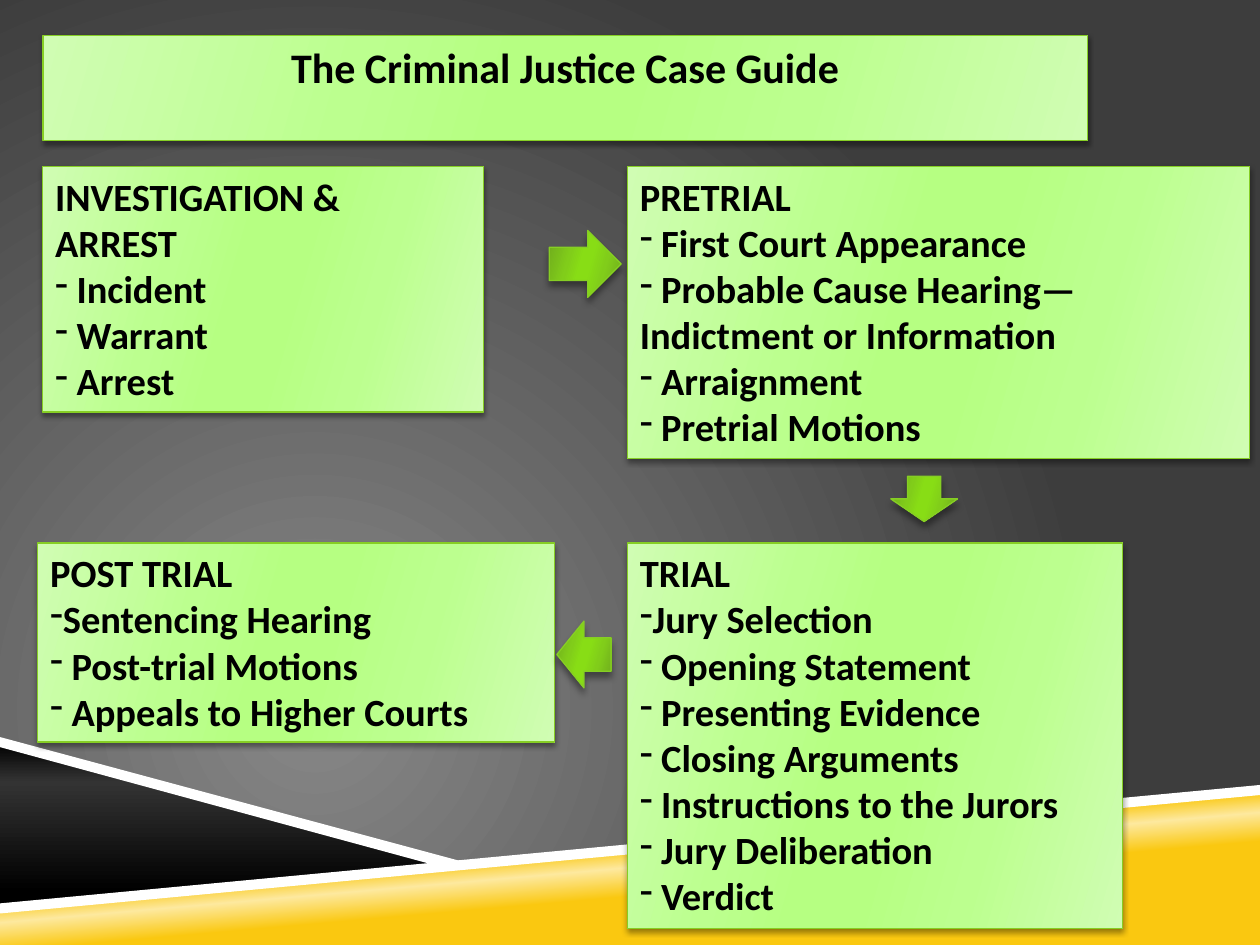
"""Build the Criminal Justice Case Guide flow chart slide."""
import pptx
import pptx.dml.color
import pptx.enum.shapes
import pptx.enum.text
import pptx.oxml.ns
import pptx.util
from lxml import etree

Inches = pptx.util.Inches
Pt = pptx.util.Pt
RGBColor = pptx.dml.color.RGBColor
qn = pptx.oxml.ns.qn
MSO_SHAPE = pptx.enum.shapes.MSO_SHAPE

BLACK = RGBColor(0x00, 0x00, 0x00)
CHARCOAL = RGBColor(0x33, 0x33, 0x33)
DARK_GRAY = RGBColor(0x3D, 0x3D, 0x3D)
GRAY = RGBColor(0x87, 0x87, 0x87)
WHITE = RGBColor(0xFF, 0xFF, 0xFF)
GOLD = RGBColor(0xFA, 0xC8, 0x10)
PALE_GOLD = RGBColor(0xFD, 0xE9, 0x9F)
PALE_GREEN = RGBColor(0xD0, 0xFD, 0xB3)
SOFT_GREEN = RGBColor(0xBC, 0xFF, 0x8F)
LIGHT_GREEN = RGBColor(0xB6, 0xFF, 0x82)
DEEP_GREEN = RGBColor(0x6E, 0xA9, 0x1D)
MID_GREEN = RGBColor(0x81, 0xCD, 0x1A)
BRIGHT_GREEN = RGBColor(0x88, 0xDD, 0x15)
BORDER_GREEN = RGBColor(0x86, 0xCE, 0x24)

GOLD_STOPS = [(39, GOLD), (50, PALE_GOLD), (58, GOLD)]
BLACK_STOPS = [(0, BLACK), (24, CHARCOAL), (90, BLACK)]
GREEN_POSITIONS = [0, 30, 45, 55, 73, 100]
BOX_STOPS = list(zip(GREEN_POSITIONS, [PALE_GREEN, SOFT_GREEN, LIGHT_GREEN,
                                       LIGHT_GREEN, SOFT_GREEN, PALE_GREEN]))
ARROW_STOPS = list(zip(GREEN_POSITIONS, [DEEP_GREEN, MID_GREEN, BRIGHT_GREEN,
                                         BRIGHT_GREEN, MID_GREEN, DEEP_GREEN]))


def apply_gradient(fill, properties, stops, angle=None):
    """Fill with a linear gradient, or a circular one if there is no angle."""
    fill.gradient()
    gradient = properties.find(qn("a:gradFill"))
    gradient.clear()
    gradient.set("rotWithShape", "1")
    stop_list = etree.SubElement(gradient, qn("a:gsLst"))
    for position, color in stops:
        stop = etree.SubElement(stop_list, qn("a:gs"), pos=str(position * 1000))
        etree.SubElement(stop, qn("a:srgbClr"), val=str(color))
    if angle is None:
        circle = etree.SubElement(gradient, qn("a:path"), path="circle")
        etree.SubElement(circle, qn("a:fillToRect"),
                         l="50000", t="100000", r="100000", b="50000")
    else:
        etree.SubElement(gradient, qn("a:lin"), ang=str(angle * 60000), scaled="0")


def style_green(shape, stops, blur, distance):
    """Give a shape the green gradient, border and soft shadow."""
    properties = shape.element.spPr
    apply_gradient(shape.fill, properties, stops, 16)
    shape.line.color.rgb = BORDER_GREEN
    shape.line.width = Pt(0.75)
    shape.shadow.inherit = False
    shadow = etree.SubElement(properties.find(qn("a:effectLst")), qn("a:outerShdw"),
                              blurRad=str(Pt(blur)), dist=str(Pt(distance)),
                              dir="5400000", rotWithShape="0")
    color = etree.SubElement(shadow, qn("a:srgbClr"), val=str(BLACK))
    etree.SubElement(color, qn("a:alpha"), val="40000")


presentation = pptx.Presentation()
presentation.slide_width = Inches(10)
presentation.slide_height = Inches(7.5)
slide = presentation.slides.add_slide(presentation.slide_layouts[5])
background_fill = slide.background.fill
background_fill.solid()
apply_gradient(background_fill, slide.element.find(".//" + qn("p:bgPr")),
               [(0, GRAY), (100, DARK_GRAY)])

bands = [
    ([(0, 7.21), (10, 6.27), (10, 7.5), (0, 7.5)], GOLD_STOPS, 265),
    ([(0, 5.89), (3.59, 6.85), (0, 7.21)], BLACK_STOPS, 90),
    ([(10, 6.23), (0, 7.17), (0, 7.25), (10, 6.31)], None, None),
    ([(0, 5.85), (0, 5.93), (3.5, 6.88), (3.75, 6.86)], None, None),
]
for corners, stops, angle in bands:
    points = [(Inches(x), Inches(y)) for x, y in corners]
    builder = slide.shapes.build_freeform(*points[0])
    builder.add_line_segments(points[1:], close=True)
    band = builder.convert_to_shape()
    if stops:
        apply_gradient(band.fill, band.element.spPr, stops, angle)
    else:
        band.fill.solid()
        band.fill.fore_color.rgb = WHITE
    band.line.fill.background()
    band.shadow.inherit = False

title = slide.shapes.title
title.element.getparent().append(title.element)
boxes = [
    (title, (0.34, 0.28, 8.29, 0.51), ["The Criminal Justice Case Guide"], []),
    (None, (0.34, 1.32, 3.5, 1.95), ["INVESTIGATION &", "ARREST"],
     [" Incident", " Warrant", " Arrest"]),
    (None, (4.98, 1.32, 4.94, 2.32), ["PRETRIAL"],
     [" First Court Appearance",
      " Probable Cause Hearing—\vIndictment or Information",
      " Arraignment", " Pretrial Motions"]),
    (None, (4.98, 4.31, 3.93, 3.06), ["TRIAL"],
     ["Jury Selection", " Opening Statement", " Presenting Evidence",
      " Closing Arguments", " Instructions to the Jurors",
      " Jury Deliberation", " Verdict"]),
    (None, (0.3, 4.31, 4.1, 1.58), ["POST TRIAL"],
     ["Sentencing Hearing", " Post-trial Motions", " Appeals to Higher Courts"]),
]
for placeholder, place, headings, steps in boxes:
    left, top, width, height = [Inches(length) for length in place]
    box = placeholder or slide.shapes.add_textbox(left, top, width, height)
    box.left, box.top, box.width, box.height = left, top, width, height
    style_green(box, BOX_STOPS, 3, 2)
    frame = box.text_frame
    frame.text = "\n".join(headings + steps)
    frame.word_wrap = True
    frame.auto_size = pptx.enum.text.MSO_AUTO_SIZE.SHAPE_TO_FIT_TEXT
    frame.vertical_anchor = pptx.enum.text.MSO_ANCHOR.TOP
    for index, paragraph in enumerate(frame.paragraphs):
        if index >= len(headings):
            paragraph_properties = paragraph._p.get_or_add_pPr()
            etree.SubElement(paragraph_properties, qn("a:buFontTx"))
            etree.SubElement(paragraph_properties, qn("a:buChar"), char="-")
        if placeholder:
            paragraph.alignment = pptx.enum.text.PP_ALIGN.CENTER
        paragraph.font.name = "Calibri"
        paragraph.font.size = Pt(24 if placeholder else 22)
        paragraph.font.bold = True
        paragraph.font.color.rgb = BLACK

arrows = [
    (MSO_SHAPE.RIGHT_ARROW, (4.36, 1.83, 0.57, 0.53)),
    (MSO_SHAPE.DOWN_ARROW, (7.07, 3.78, 0.53, 0.36)),
    (MSO_SHAPE.LEFT_ARROW, (4.42, 4.93, 0.43, 0.53)),
]
for kind, place in arrows:
    arrow = slide.shapes.add_shape(kind, *[Inches(length) for length in place])
    style_green(arrow, ARROW_STOPS, 4, 3.3)

presentation.save("out.pptx")
